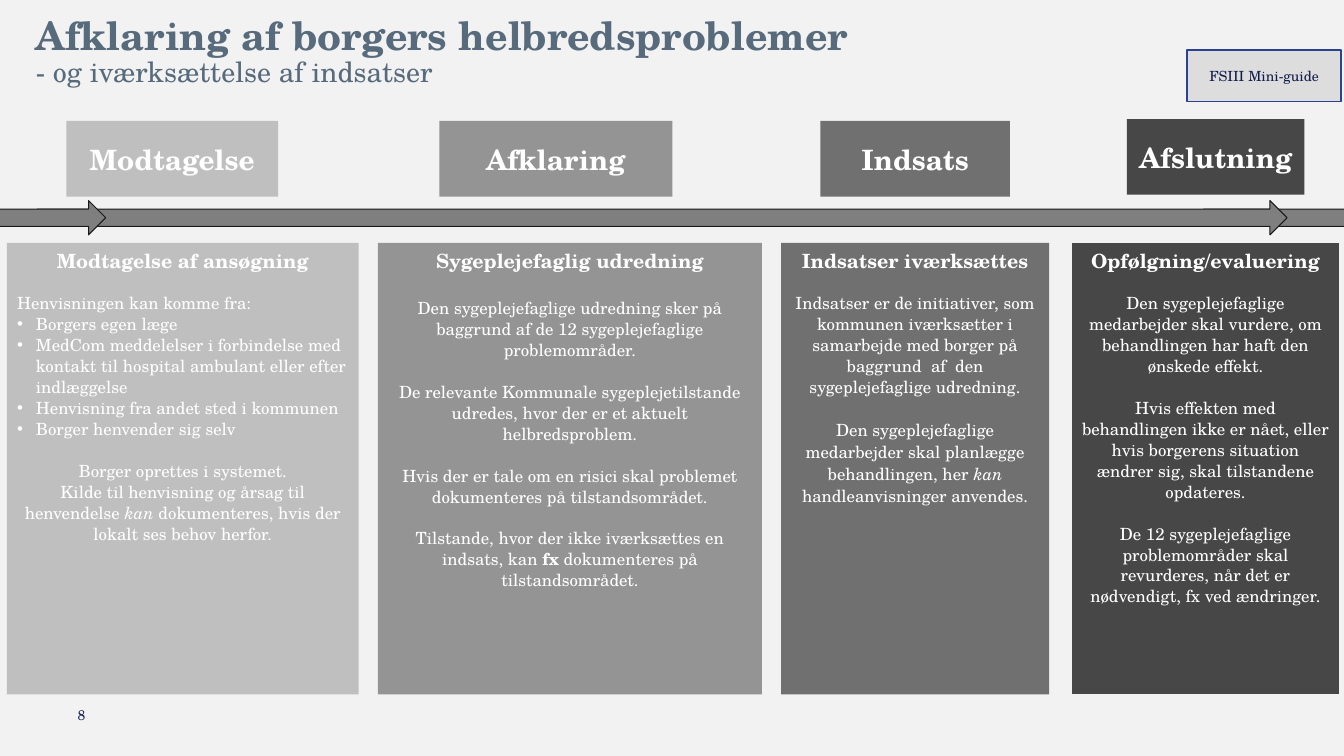
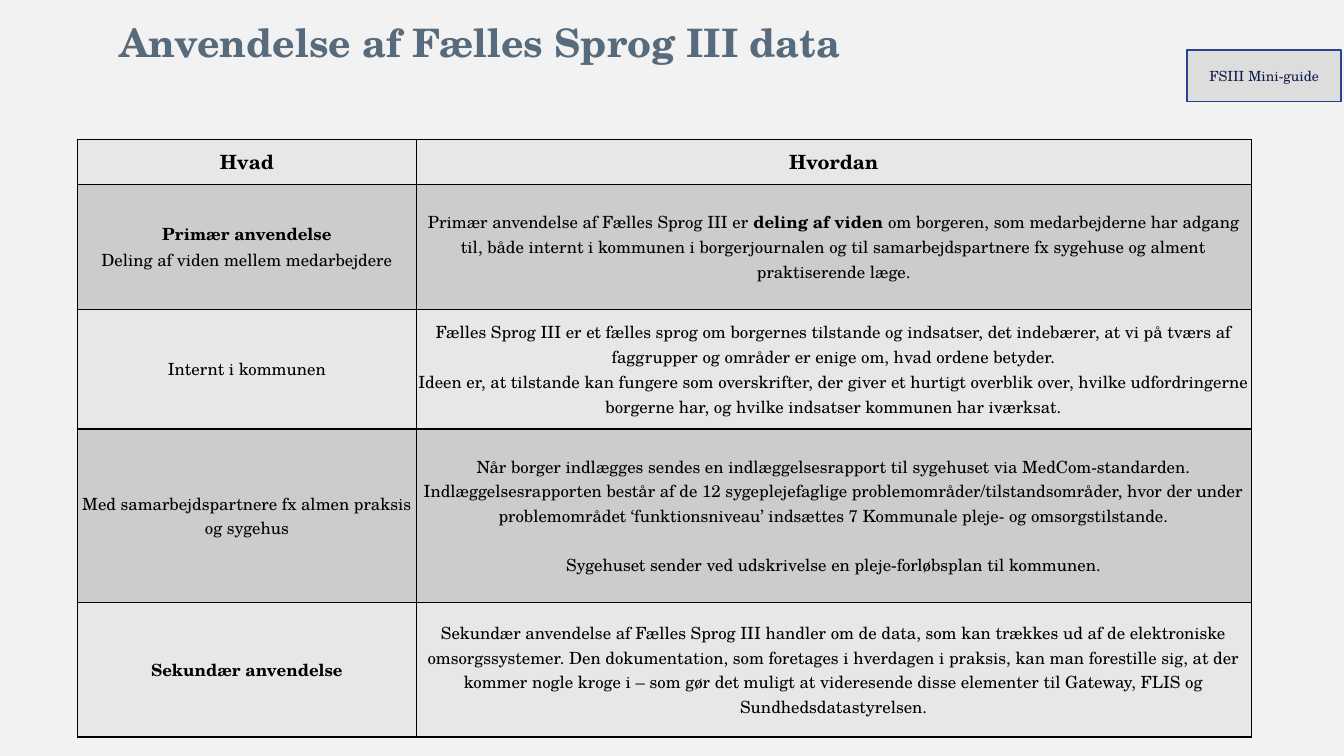
from lxml.etree import SubElement as Sub
from pptx import Presentation
from pptx.dml.color import RGBColor
from pptx.enum.shapes import MSO_SHAPE as Kind
from pptx.enum.text import MSO_ANCHOR as Anchor, MSO_AUTO_SIZE as Auto, PP_ALIGN as Align
from pptx.oxml.ns import qn
from pptx.util import Pt

hue = RGBColor.from_string
FACE = "TeX Gyre Schola"
BACK, WHITE, BLACK, SLATE, NAVY = "F2F2F2", "FFFFFF", "000000", "576B7C", "141E4D"
GREYS = ["BFBFBF", "949494", "707070", "474747"]
LEFT = {"alignment": Align.LEFT}
BOLD = {"bold": True}
HEAD = {"color": WHITE, "size": 14, "bold": True, "line_spacing": 1.04}
BODY = {"color": WHITE, "size": 12, "line_spacing": 1.04}
TITLE = {"color": SLATE, "size": 28, "bold": True, "line_spacing": 0.9, **LEFT}
ITEM = {**LEFT, "bullet": True}


def write(frame, lines, base, anchor=Anchor.MIDDLE, inset=None):
    frame.word_wrap = True
    frame.auto_size = Auto.NONE
    frame.vertical_anchor = anchor
    if inset is not None:
        for side in ("left", "top", "right", "bottom"):
            setattr(frame, f"margin_{side}", Pt(inset))
    for num, (text, more) in enumerate(lines):
        look = {"alignment": Align.CENTER, "line_spacing": 1.0, "gap": 0,
                "bold": False, **base, **more}
        para = frame.paragraphs[0] if num == 0 else frame.add_paragraph()
        prop = para._p.get_or_add_pPr()
        dot = look.get("bullet")
        prop.set("marL", str(Pt(13.5) if dot else 0))
        prop.set("indent", str(Pt(-13.5) if dot else 0))
        if dot:
            Sub(prop, qn("a:buFont")).set("typeface", "Arial")
            Sub(prop, qn("a:buChar")).set("char", "•")
        else:
            Sub(prop, qn("a:buNone"))
        para.space_before = Pt(look["gap"])
        for key in ("alignment", "line_spacing"):
            setattr(para, key, look[key])
        for spot, part in enumerate(text.split("|")):
            run = para.add_run()
            run.text = part
            font = run.font
            form = {"name": FACE, "size": Pt(look["size"]), "bold": look["bold"]}
            if spot % 2:
                form[look["mark"]] = True
            for key, val in form.items():
                setattr(font, key, val)
            font.color.rgb = hue(look["color"])


def block(slide, kind, rect, fill, line=None, width=0.75):
    shape = slide.shapes.add_shape(kind, *map(Pt, rect))
    shape.shadow.inherit = False
    shape.fill.solid()
    shape.fill.fore_color.rgb = hue(fill)
    if line:
        shape.line.color.rgb = hue(line)
        shape.line.width = Pt(width)
    else:
        shape.line.fill.background()
    return shape


deck = Presentation()
deck.slide_width, deck.slide_height = Pt(960), Pt(540)
ground = deck.slide_master.background.fill
ground.solid()
ground.fore_color.rgb = hue(BACK)

PAGES = [
    (1, (25.6, 6.5, 878, 62), Anchor.MIDDLE,
     [("Afklaring af borgers helbredsproblemer", {}),
      ("- og iværksættelse af indsatser", {"size": 20, "bold": False})]),
    (5, (85, 18, 860, 28.8), Anchor.BOTTOM,
     [("Anvendelse af Fælles Sprog III data", {})]),
]
slides = []
for layout, rect, anchor, lines in PAGES:
    slide = deck.slides.add_slide(deck.slide_layouts[layout])
    title = slide.shapes.title
    for key, val in zip(("left", "top", "width", "height"), rect):
        setattr(title, key, Pt(val))
    write(title.text_frame, lines, TITLE, anchor, 0)
    tag = block(slide, Kind.RECTANGLE, (847.8, 35.8, 110.2, 36.7), "DDDDDD", "2A438F", 1)
    write(tag.text_frame, [("FSIII Mini-guide", {})], {"color": NAVY, "size": 10})
    slides.append(slide)
flow, usage = slides

page = flow.shapes.add_textbox(Pt(55.4), Pt(496), Pt(216), Pt(28.8))
write(page.text_frame, [("8", LEFT)], {"color": NAVY, "size": 10}, inset=0)

STEPS = [
    ("Modtagelse", (47.5, 86.4, 151.2), (5, 251.3), [
        ("Modtagelse af ansøgning", HEAD),
        ("Henvisningen kan komme fra:", {**LEFT, "gap": 14}),
        ("Borgers egen læge", ITEM),
        ("MedCom meddelelser i forbindelse med kontakt til hospital ambulant "
         "eller efter indlæggelse", ITEM),
        ("Henvisning fra andet sted i kommunen", ITEM),
        ("Borger henvender sig selv", ITEM),
        ("Borger oprettes i systemet.", {"gap": 15}),
        ("Kilde til henvisning og årsag til henvendelse |kan| dokumenteres, "
         "hvis der lokalt ses behov herfor.", {"mark": "italic"}),
    ]),
    ("Afklaring", (313.9, 86.4, 166.3), (270, 274.3), [
        ("Sygeplejefaglig udredning", HEAD),
        ("Den sygeplejefaglige udredning sker på baggrund af de 12 "
         "sygeplejefaglige problemområder.", {"gap": 17.5}),
        ("De relevante Kommunale sygeplejetilstande udredes, hvor der er et "
         "aktuelt helbredsproblem.", {"gap": 15}),
        ("Hvis der er tale om en risici skal problemet dokumenteres på "
         "tilstandsområdet.", {"gap": 15}),
        ("Tilstande, hvor der ikke iværksættes en indsats, kan |fx| "
         "dokumenteres på tilstandsområdet.", {"gap": 15, "mark": "bold"}),
    ]),
    ("Indsats", (586, 86.4, 135.4), (558, 191.5), [
        ("Indsatser iværksættes", HEAD),
        ("Indsatser er de initiativer, som kommunen iværksætter i samarbejde "
         "med borger på baggrund  af  den sygeplejefaglige udredning.", {"gap": 14}),
        ("Den sygeplejefaglige medarbejder skal planlægge behandlingen, her "
         "|kan| handleanvisninger anvendes.",
         {"gap": 15, "mark": "italic", "line_spacing": 1.1}),
    ]),
    ("Afslutning", (805, 85, 126.7), (765.4, 191.5), [
        ("Opfølgning/evaluering", HEAD),
        ("Den sygeplejefaglige medarbejder skal vurdere, om behandlingen har "
         "haft den ønskede effekt.", {"gap": 14}),
        ("Hvis effekten med behandlingen ikke er nået, eller hvis borgerens "
         "situation ændrer sig, skal tilstandene opdateres.", {"gap": 15}),
        ("De 12 sygeplejefaglige problemområder skal revurderes, når det er "
         "nødvendigt, fx ved ændringer.", {"gap": 15}),
    ]),
]
for num, (name, (x, y, wide), (left, width), lines) in enumerate(STEPS):
    shade = GREYS[num]
    label = block(flow, Kind.RECTANGLE, (x, y, wide, 54), shade)
    write(label.text_frame, [(name, {})], {**HEAD, "size": 20})
    rect = (left, 173.5, width, 322.5)
    if num == 0:
        panel = flow.placeholders[1]
        for key, val in zip(("left", "top", "width", "height"), rect):
            setattr(panel, key, Pt(val))
        panel.fill.solid()
        panel.fill.fore_color.rgb = hue(shade)
    else:
        panel = block(flow, Kind.RECTANGLE, rect, shade, BACK if num == 3 else None)
    write(panel.text_frame, lines, BODY, Anchor.TOP)

for left, width in [(859.7, 173.5), (26.6, 892.8), (-42.5, 118)]:
    block(flow, Kind.RIGHT_ARROW, (left, 143.3, width, 24.5), "7F7F7F", "191919")

ROWS = [
    (32.1, [("Hvad", BOLD)], [("Hvordan", BOLD)]),
    (89.3, [("Primær anvendelse", BOLD), ("Deling af viden mellem medarbejdere", {})],
     [("Primær anvendelse af Fælles Sprog III er |deling af viden| om borgeren, "
       "som medarbejderne har adgang til, både internt i kommunen i "
       "borgerjournalen og til samarbejdspartnere fx sygehuse og alment "
       "praktiserende læge.", {"mark": "bold"})]),
    (85.7, [("Internt i kommunen", {})],
     [("Fælles Sprog III er et fælles sprog om borgernes tilstande og indsatser, "
       "det indebærer, at vi på tværs af faggrupper og områder er enige om, "
       "hvad ordene betyder.", {}),
      ("Ideen er, at tilstande kan fungere som overskrifter, der giver et "
       "hurtigt overblik over, hvilke udfordringerne borgerne har, og hvilke "
       "indsatser kommunen har iværksat.", {})]),
    (123.6, [("Med samarbejdspartnere fx almen praksis og sygehus", {})],
     [("Når borger indlægges sendes en indlæggelsesrapport til sygehuset via "
       "MedCom-standarden. Indlæggelsesrapporten består af de 12 "
       "sygeplejefaglige problemområder/tilstandsområder, hvor der under "
       "problemområdet ‘funktionsniveau’ indsættes 7 Kommunale pleje- og "
       "omsorgstilstande.", {}),
      ("Sygehuset sender ved udskrivelse en pleje-forløbsplan til kommunen.",
       {"gap": 17.5})]),
    (96.4, [("Sekundær anvendelse", BOLD)],
     [("Sekundær anvendelse af Fælles Sprog III handler om de data, som kan "
       "trækkes ud af de elektroniske omsorgssystemer. Den dokumentation, som "
       "foretages i hverdagen i praksis, kan man forestille sig, at der kommer "
       "nogle kroge i – som gør det muligt at videresende disse elementer til "
       "Gateway, FLIS og Sundhedsdatastyrelsen.", {})]),
]
grid = usage.shapes.add_table(len(ROWS), 2, Pt(55.4), Pt(99.4), Pt(838.4), Pt(427)).table
for col, width in zip(grid.columns, (242, 596.4)):
    col.width = Pt(width)
for num, (high, *cells) in enumerate(ROWS):
    grid.rows[num].height = Pt(high)
    for spot, lines in enumerate(cells):
        cell = grid.cell(num, spot)
        prop = cell._tc.get_or_add_tcPr()
        for side in "LRTB":
            edge = Sub(prop, qn(f"a:ln{side}"), w=str(Pt(1)))
            Sub(Sub(edge, qn("a:solidFill")), qn("a:srgbClr"), val=BLACK)
        cell.fill.solid()
        cell.fill.fore_color.rgb = hue("CCCCCC" if num % 2 else "E7E7E7")
        for side in ("left", "top", "right", "bottom"):
            setattr(cell, f"margin_{side}", 0)
        cell.vertical_anchor = Anchor.MIDDLE
        size = 12 if num else 14
        write(cell.text_frame, lines, {"color": BLACK, "size": size})
        body = cell.text_frame._txBody.bodyPr
        body.attrib.clear()
        for child in list(body):
            body.remove(child)

deck.save("out.pptx")
